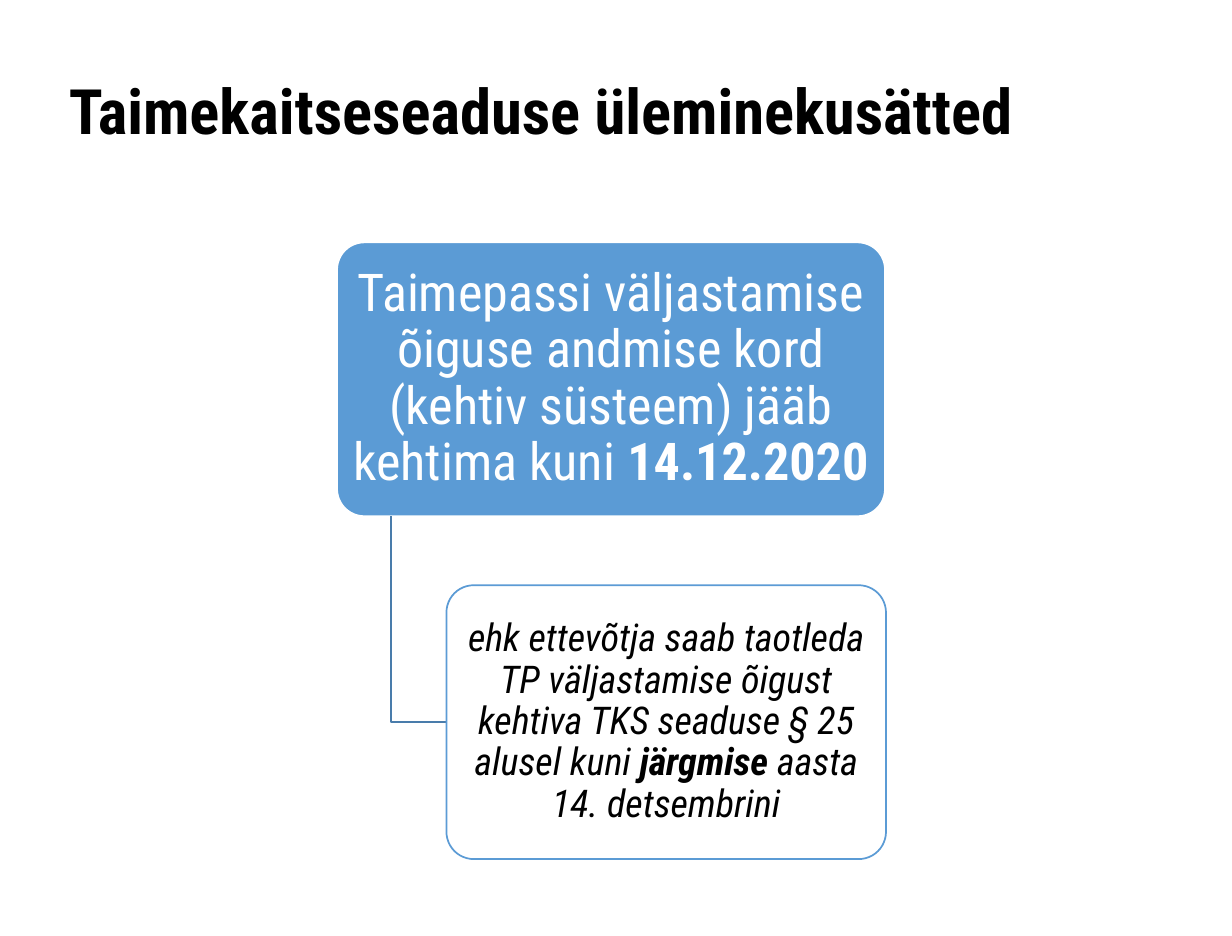
from lxml import etree
from pptx import Presentation
from pptx import util as u
from pptx.dml.color import RGBColor
from pptx.enum import shapes, text
from pptx.oxml.ns import qn

# Content: paragraphs as (text, bold) runs
TITLE = [("Taimekaitseseaduse üleminekusätted", True)]
RULE = [
    ("Taimepassi väljastamise õiguse andmise kord (kehtiv süsteem) jääb kehtima kuni ", False),
    ("14.12.2020 ", True),
]
MEANING = [
    ("ehk ettevõtja saab taotleda TP väljastamise õigust kehtiva TKS seaduse § 25 alusel kuni ", False),
    ("järgmise ", True),
    ("aasta 14. detsembrini", False),
]

COLORS = {"white": "FFFFFF", "black": "000000", "blue": "5B9BD5", "link": "497CAB"}
FONT = "Roboto Condensed"

# Geometry in px, 127 to the inch: the slide is 25 by 19 cm
PX = 7200
SLIDE = (1250, 950)
TITLE_BOX = (70, 75, 1100, 150)
RULE_BOX = (342, 246, 556, 278)
MEANING_BOX = (453, 594, 446, 278)
INDENT = 56  # from the vertical link to the lower box


def rgb(name):
    return RGBColor.from_string(COLORS[name])


def emu(values):
    return [v * PX for v in values]


def write(s, runs, size, color, insets, spacing, align, anchor, italic=None):
    tf = s.text_frame
    sides = ("margin_left", "margin_top", "margin_right", "margin_bottom")
    frame = dict(zip(sides, emu(insets)), word_wrap=True, vertical_anchor=anchor)
    for key, value in frame.items():
        setattr(tf, key, value)
    p = tf.paragraphs[0]
    p.alignment, p.line_spacing = align, spacing
    for words, bold in runs:
        r = p.add_run()
        r.text = words
        for key, value in dict(name=FONT, size=u.Pt(size), bold=bold, italic=italic).items():
            setattr(r.font, key, value)
        r.font.color.rgb = rgb(color)


def add_box(slide, box, fill, line):
    s = slide.shapes.add_shape(shapes.MSO_SHAPE.ROUNDED_RECTANGLE, *emu(box))
    s.adjustments[0] = 0.1
    s.shadow.inherit = False
    s.fill.solid()
    s.fill.fore_color.rgb = rgb(fill)
    s.line.color.rgb = rgb(line)
    s.line.width = u.Pt(1)
    return s


prs = Presentation()
prs.slide_width, prs.slide_height = emu(SLIDE)
slide = prs.slides.add_slide(prs.slide_layouts[6])

# Title
s = slide.shapes.add_textbox(*emu(TITLE_BOX))
write(s, TITLE, 36, "black", (0, 8, 0, 0), 0.88, text.PP_ALIGN.LEFT, text.MSO_ANCHOR.TOP)

# Rule box
s = add_box(slide, RULE_BOX, "blue", "white")
write(s, RULE, 30, "white", (7, 5, 7, 5), 0.9, text.PP_ALIGN.CENTER, text.MSO_ANCHOR.MIDDLE)

# Link from the rule down to its meaning
left, top, _, height = MEANING_BOX
link_x, link_y = left - INDENT, top + height // 2
builder = slide.shapes.build_freeform(link_x, RULE_BOX[1] + RULE_BOX[3], scale=PX)
builder.add_line_segments([(link_x, link_y), (left, link_y)], close=False)
s = builder.convert_to_shape()
s.shadow.inherit = False
s.fill.background()
s.line.color.rgb = rgb("link")
s.line.width = u.Pt(1)

# Meaning box, slightly transparent
s = add_box(slide, MEANING_BOX, "white", "blue")
fill_color = s._element.spPr.find(qn("a:solidFill"))[0]
etree.SubElement(fill_color, qn("a:alpha"), val="90000")
write(s, MEANING, 22, "black", (6, 4, 6, 4), 0.9, text.PP_ALIGN.CENTER,
      text.MSO_ANCHOR.MIDDLE, italic=True)

prs.save("out.pptx")
